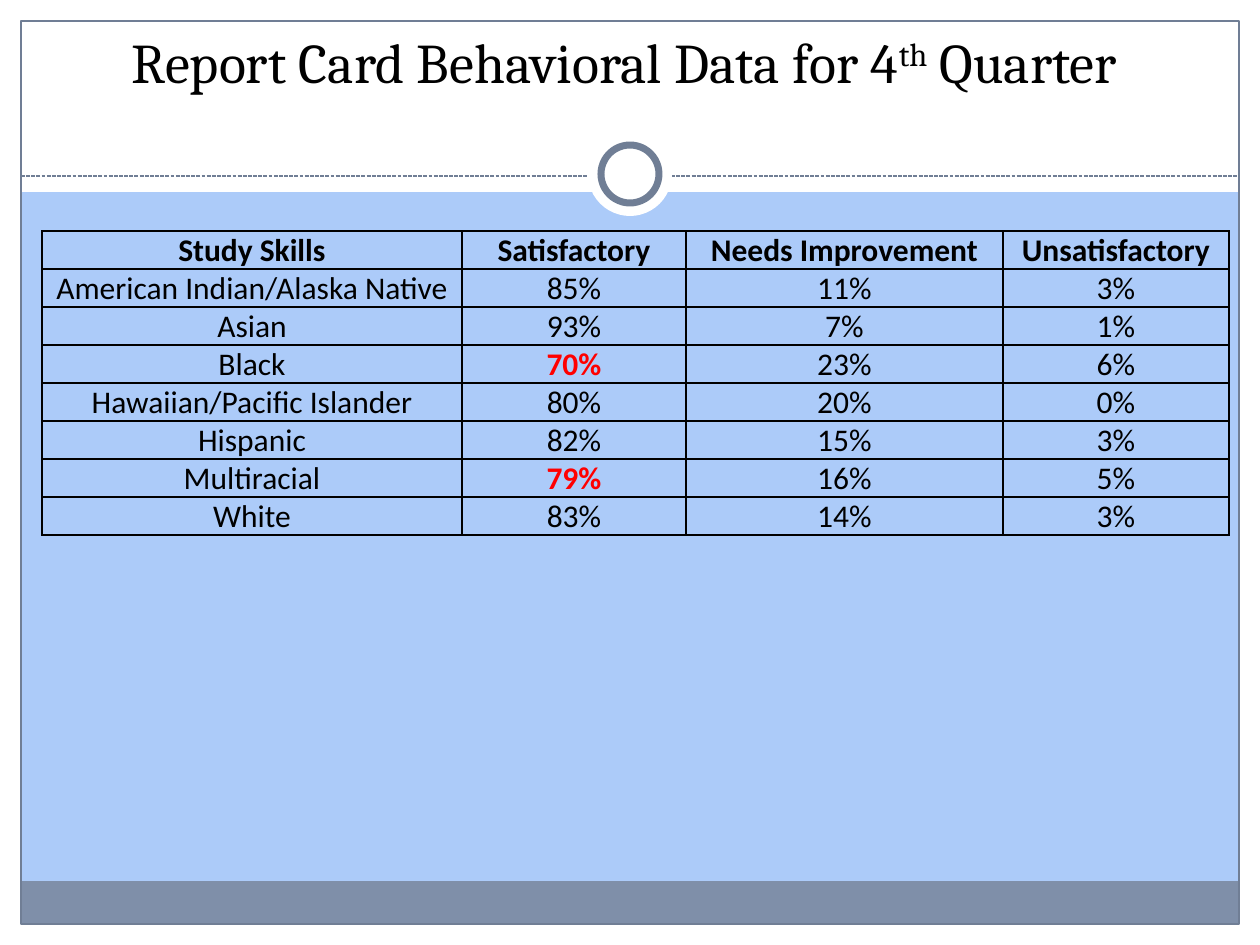
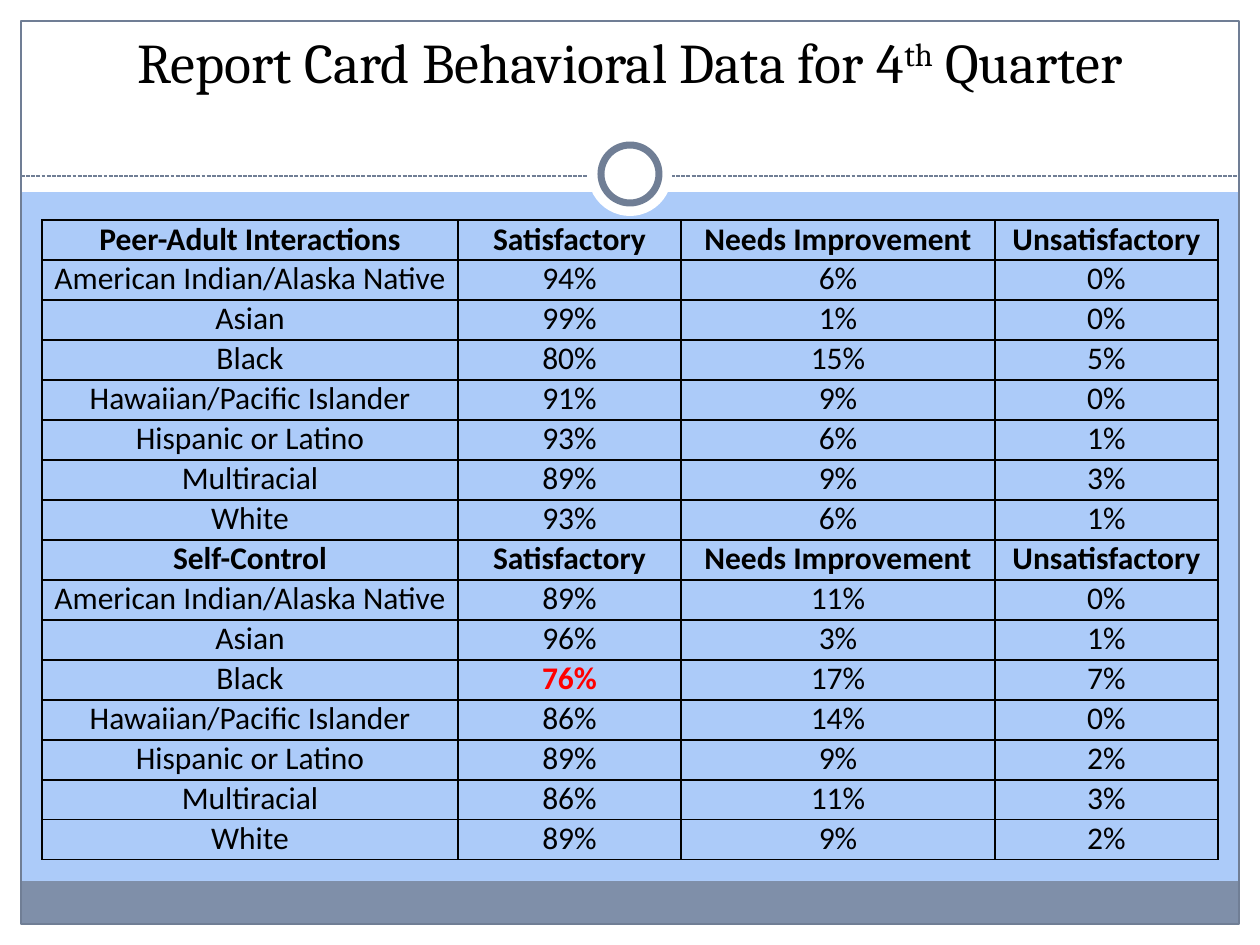
"""Build two slides of fourth-quarter behavioral report card tables."""
from lxml import etree
from pptx import Presentation
from pptx.dml.color import RGBColor
from pptx.enum.dml import MSO_LINE
from pptx.enum.shapes import MSO_CONNECTOR, MSO_SHAPE
from pptx.enum.text import MSO_ANCHOR, MSO_AUTO_SIZE, PP_ALIGN
from pptx.oxml.ns import qn
from pptx.util import Pt

RECT, OVAL = MSO_SHAPE.RECTANGLE, MSO_SHAPE.OVAL
STRAIGHT, SHORT_DASH = MSO_CONNECTOR.STRAIGHT, MSO_LINE.SQUARE_DOT
CENTER, TOP, GROW = PP_ALIGN.CENTER, MSO_ANCHOR.TOP, MSO_AUTO_SIZE.SHAPE_TO_FIT_TEXT

TITLE = [("Report Card Behavioral Data for 4", False), ("th", True), (" Quarter", False)]
RATINGS = ("Satisfactory", "Needs Improvement", "Unsatisfactory")
STUDY_SKILLS = ("Study Skills", [
    ("American Indian/Alaska Native", 85, 11, 3),
    ("Asian", 93, 7, 1),
    ("Black", 70, 23, 6),
    ("Hawaiian/Pacific Islander", 80, 20, 0),
    ("Hispanic", 82, 15, 3),
    ("Multiracial", 79, 16, 5),
    ("White", 83, 14, 3),
])
INTERACTIONS = ("Peer-Adult Interactions", [
    ("American Indian/Alaska Native", 94, 6, 0),
    ("Asian", 99, 1, 0),
    ("Black", 80, 15, 5),
    ("Hawaiian/Pacific Islander", 91, 9, 0),
    ("Hispanic or Latino", 93, 6, 1),
    ("Multiracial", 89, 9, 3),
    ("White", 93, 6, 1),
])
SELF_CONTROL = ("Self-Control", [
    ("American Indian/Alaska Native", 89, 11, 0),
    ("Asian", 96, 3, 1),
    ("Black", 76, 17, 7),
    ("Hawaiian/Pacific Islander", 86, 14, 0),
    ("Hispanic or Latino", 89, 9, 2),
    ("Multiracial", 86, 11, 3),
    ("White", 89, 9, 2),
])
SLIDES = [
    {"skills": [STUDY_SKILLS], "top": 231, "columns": (420, 224, 317, 226),
     "row_height": 38, "title_width": 1207},
    {"skills": [INTERACTIONS, SELF_CONTROL], "top": 220, "columns": (416, 223, 314, 223),
     "row_height": 40, "title_width": 1218},
]
SATISFACTORY_GOAL = 80

WIDTH, HEIGHT, MARGIN, TABLE_LEFT = 1260, 945, 21, 42
DIVIDER_Y = 176
SKY, WHITE, STEEL, SLATE, BLACK, RED = "ACCBF9", "FFFFFF", "7F8FA9", "707E95", "000000", "FF0000"
INNER_WIDTH = WIDTH - 2 * MARGIN
BACKDROP = [
    (RECT, (0, HEIGHT - MARGIN, WIDTH, MARGIN), WHITE, None),
    (RECT, (0, 0, WIDTH, 192), WHITE, None),
    (RECT, (0, 0, MARGIN, HEIGHT), WHITE, None),
    (RECT, (WIDTH - MARGIN, 0, MARGIN, HEIGHT), WHITE, None),
    (RECT, (MARGIN, 881, INNER_WIDTH, 43), STEEL, None),
    (RECT, (MARGIN, MARGIN, INNER_WIDTH, HEIGHT - 2 * MARGIN), None, 0.75),
]
MEDALLION = [
    (OVAL, (588, 132, 84, 84), WHITE, None),
    (OVAL, (601, 145, 58, 58), WHITE, 4),
]
TITLE_FONT = {"name": "Cambria", "size": Pt(32)}
CELL_FONT = {"name": "Calibri", "size": Pt(18)}
CELL_FORMAT = {"margin_left": 9, "margin_right": 9, "margin_top": 0, "margin_bottom": 0}


def px(length):
    """Turn a length in px into EMU."""
    return round(length * 914400 / 126)


def paint(fill, color):
    """Fill with a hex color, or with nothing."""
    if color is None:
        fill.background()
    else:
        fill.solid()
        fill.fore_color.rgb = RGBColor.from_string(color)


def apply(target, values):
    """Set each named attribute of the target."""
    for name, value in values.items():
        setattr(target, name, value)


def set_font(font, values, color=BLACK):
    """Format a font and color it."""
    apply(font, values)
    font.color.rgb = RGBColor.from_string(color)


def outline(line, weight):
    """Draw a slate line of the given weight, or none."""
    paint(line.fill, SLATE if weight else None)
    if weight:
        line.width = Pt(weight)


def draw_parts(slide, parts):
    """Draw preset shapes and return their elements."""
    elements = []
    for preset, box, color, weight in parts:
        part = slide.shapes.add_shape(preset, *map(px, box))
        part.shadow.inherit = False
        paint(part.fill, color)
        outline(part.line, weight)
        elements.append(part._element)
    return elements


def draw_divider(slide):
    """Draw the dashed divider and return its element."""
    ends = (MARGIN, DIVIDER_Y, WIDTH - MARGIN, DIVIDER_Y)
    divider = slide.shapes.add_connector(STRAIGHT, *map(px, ends))
    outline(divider.line, 0.75)
    divider.line.dash_style = SHORT_DASH
    etree.SubElement(divider._element.spPr, qn("a:effectLst"))
    return divider._element


def decorate_layout(layout, slide):
    """Move the shared frame from a slide to its layout."""
    paint(layout.background.fill, SKY)
    for footer in list(layout.placeholders)[1:]:
        footer._element.getparent().remove(footer._element)
    frame = [*draw_parts(slide, BACKDROP), draw_divider(slide), *draw_parts(slide, MEDALLION)]
    for element in frame:
        layout.shapes._spTree.append(element)


def write_title(slide, width):
    """Place the title and raise its ordinal suffix."""
    title = slide.shapes.title
    apply(title, {"left": px(MARGIN), "top": px(MARGIN), "width": px(width), "height": px(81)})
    apply(title.text_frame, {"word_wrap": True, "vertical_anchor": TOP, "auto_size": GROW})
    line = title.text_frame.paragraphs[0]
    line.alignment = CENTER
    for words, raised in TITLE:
        run = line.add_run()
        run.text = words
        set_font(run.font, TITLE_FONT)
        if raised:
            run._r.get_or_add_rPr().set("baseline", "30000")


def add_borders(cell):
    """Give a cell a black border on all sides."""
    properties = cell._tc.get_or_add_tcPr()
    for side in ("a:lnL", "a:lnR", "a:lnT", "a:lnB"):
        border = etree.SubElement(properties, qn(side), w=str(Pt(1)))
        ink = etree.SubElement(border, qn("a:solidFill"))
        etree.SubElement(ink, qn("a:srgbClr"), val=BLACK)


def write_cell(cell, words, bold, color):
    """Write and format one table cell."""
    apply(cell, {name: px(value) for name, value in CELL_FORMAT.items()})
    add_borders(cell)
    cell.fill.background()
    line = cell.text_frame.paragraphs[0]
    line.alignment = CENTER
    run = line.add_run()
    run.text = words
    set_font(run.font, {**CELL_FONT, "bold": bold}, color)


def table_rows(skills):
    """List each row as (words, bold, color) cells, with low results in red."""
    rows = []
    for skill, groups in skills:
        rows.append([(heading, True, BLACK) for heading in (skill, *RATINGS)])
        for group, *shares in groups:
            cells = [(group, False, BLACK)]
            for rating, share in zip(RATINGS, shares):
                low = rating == "Satisfactory" and share < SATISFACTORY_GOAL
                cells.append((f"{share}%", low, RED if low else BLACK))
            rows.append(cells)
    return rows


def add_results(slide, skills, top, columns, row_height):
    """Add the table of results."""
    rows = table_rows(skills)
    box = (TABLE_LEFT, top, sum(columns), row_height * len(rows))
    results = slide.shapes.add_table(len(rows), len(columns), *map(px, box)).table
    apply(results, {"first_row": False, "horz_banding": False})
    for column, width in zip(results.columns, columns):
        column.width = px(width)
    for row, cells in zip(results.rows, rows):
        row.height = px(row_height)
        for cell, content in zip(row.cells, cells):
            write_cell(cell, *content)


def main():
    """Build and save the presentation."""
    prs = Presentation()
    apply(prs, {"slide_width": px(WIDTH), "slide_height": px(HEIGHT)})
    layout = prs.slide_layouts[5]
    for number, content in enumerate(SLIDES):
        slide = prs.slides.add_slide(layout)
        if number == 0:
            decorate_layout(layout, slide)
        add_results(slide, content["skills"], content["top"], content["columns"],
                    content["row_height"])
        write_title(slide, content["title_width"])
    prs.save("out.pptx")


if __name__ == "__main__":
    main()
